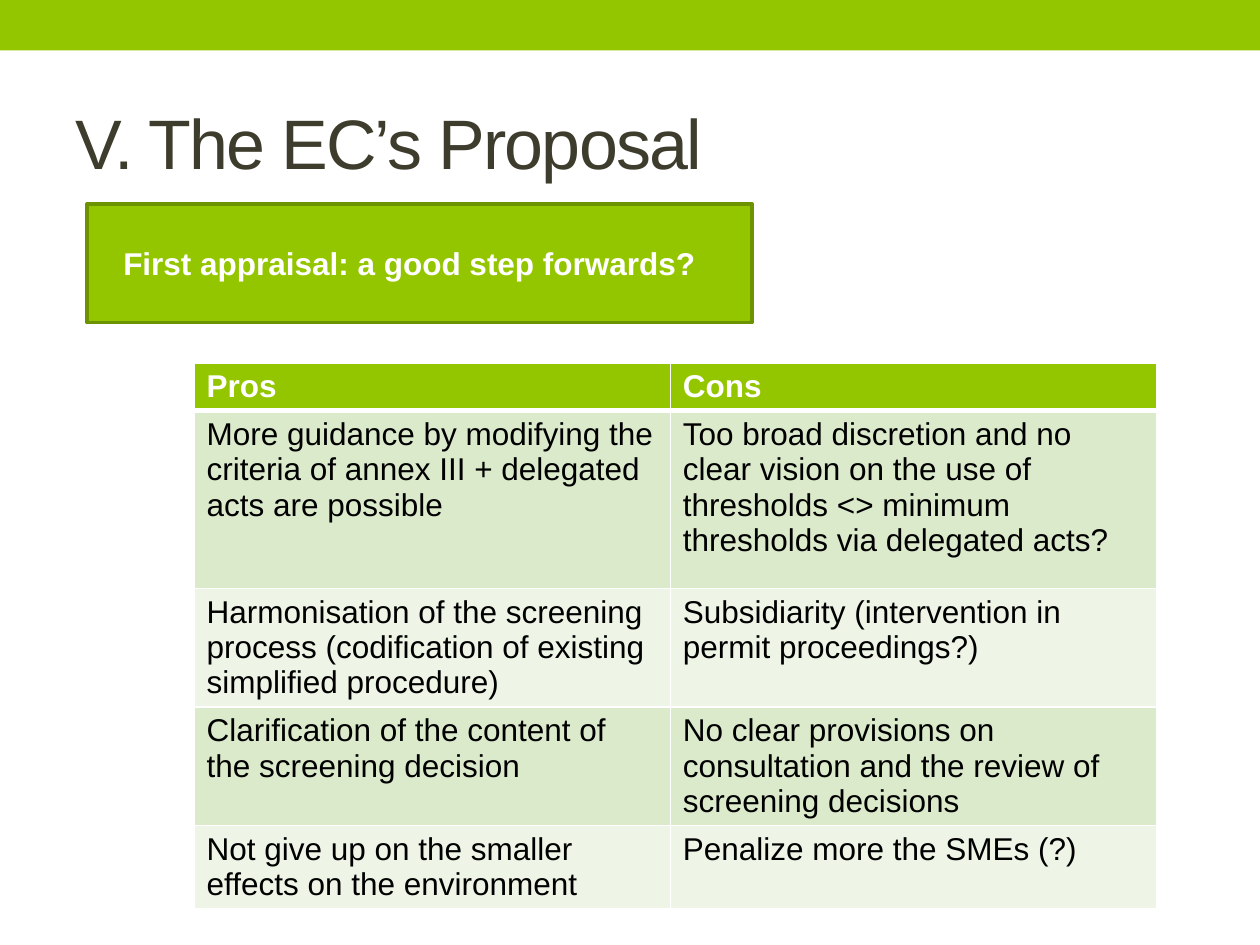
from pptx import Presentation
from pptx.dml.color import RGBColor
from pptx.enum.shapes import MSO_SHAPE as SHAPE
from pptx.enum.text import MSO_ANCHOR as ANCHOR, PP_ALIGN as ALIGN
from pptx.oxml import parse_xml
from pptx.oxml.ns import nsdecls
from pptx.util import Inches, Pt

TITLE = "V. The EC’s Proposal"
QUESTION = "First appraisal: a good step forwards?"
ROWS = [
    ("Pros", "Cons"),
    ("More guidance by modifying the criteria of annex III + delegated acts are possible",
     "Too broad discretion and no clear vision on the use of thresholds <> minimum thresholds via delegated acts?"),
    ("Harmonisation of the screening process (codification of existing simplified procedure)",
     "Subsidiarity (intervention in permit proceedings?)"),
    ("Clarification of the content of the screening decision",
     "No clear provisions on consultation and the review of screening decisions"),
    ("Not give up on the smaller effects on the environment",
     "Penalize more the SMEs (?)"),
]
COL_WIDTHS = [3.78, 3.86]
ROW_HEIGHTS = [0.38, 1.41, 0.88, 0.88, 0.62]
GREEN, WHITE = "94C600", "FFFFFF"
BANDS = ["EEF5E7", "DCEACC"]
HEADING = {"size": Pt(18), "bold": True, "name": "Arial"}
BODY = {**HEADING, "bold": False}


def rgb(value):
    return RGBColor.from_string(value)


def paint(obj, color):
    obj.fill.solid()
    obj.fill.fore_color.rgb = rgb(color)


def write(tf, text, fmt, color, align=ALIGN.LEFT):
    p = tf.paragraphs[0]
    p.alignment = align
    r = p.add_run()
    r.text = text
    for key, value in fmt.items():
        setattr(r.font, key, value)
    r.font.color.rgb = rgb(color)
    return r


def add_box(s, at, fill):
    sp = s.shapes.add_shape(SHAPE.RECTANGLE, *map(Inches, at))
    sp.shadow.inherit = False
    paint(sp, fill)
    return sp


def add_borders(cell, bottom):
    tcPr = cell._tc.get_or_add_tcPr()
    for side, width in {"L": 1, "R": 1, "T": 1, "B": bottom}.items():
        tcPr.append(parse_xml(
            f'<a:ln{side} {nsdecls("a")} w="{Pt(width)}"><a:solidFill>'
            f'<a:srgbClr val="{WHITE}"/></a:solidFill></a:ln{side}>'))


def add_pros_cons(s):
    frame = s.shapes.add_table(
        len(ROWS), len(COL_WIDTHS), Inches(1.54), Inches(2.88),
        Inches(sum(COL_WIDTHS)), Inches(sum(ROW_HEIGHTS)))
    table = frame.table
    for col, width in zip(table.columns, COL_WIDTHS):
        col.width = Inches(width)
    for i, (texts, height) in enumerate(zip(ROWS, ROW_HEIGHTS)):
        table.rows[i].height = Inches(height)
        header = i == 0
        for j, text in enumerate(texts):
            cell = table.cell(i, j)
            add_borders(cell, 3 if header else 1)
            paint(cell, GREEN if header else BANDS[i % 2])
            write(cell.text_frame, text, HEADING if header else BODY,
                  WHITE if header else "000000")


def main():
    prs = Presentation()
    prs.slide_width, prs.slide_height = Inches(10), Inches(7.5)
    s = prs.slides.add_slide(prs.slide_layouts[5])

    band = add_box(s, (0, 0, 10, 0.4), GREEN)
    band.line.fill.background()

    title = s.shapes.title
    title.left, title.top, title.width, title.height = map(Inches, (0.5, 0.58, 9, 1.08))
    title.text_frame.vertical_anchor = ANCHOR.MIDDLE
    r = write(title.text_frame, TITLE, {"size": Pt(40), "name": "Arial"}, "3E3D2D")
    r.font._element.set("spc", "-100")

    box = add_box(s, (0.69, 1.62, 5.28, 0.94), GREEN)
    box.line.color.rgb = rgb("6D9200")
    box.line.width = Pt(2.08)
    tf = box.text_frame
    tf.word_wrap = True
    tf.vertical_anchor = ANCHOR.MIDDLE
    tf.margin_right = Inches(0.26)
    write(tf, QUESTION, HEADING, WHITE, ALIGN.CENTER)

    add_pros_cons(s)
    prs.save("out.pptx")


if __name__ == "__main__":
    main()
